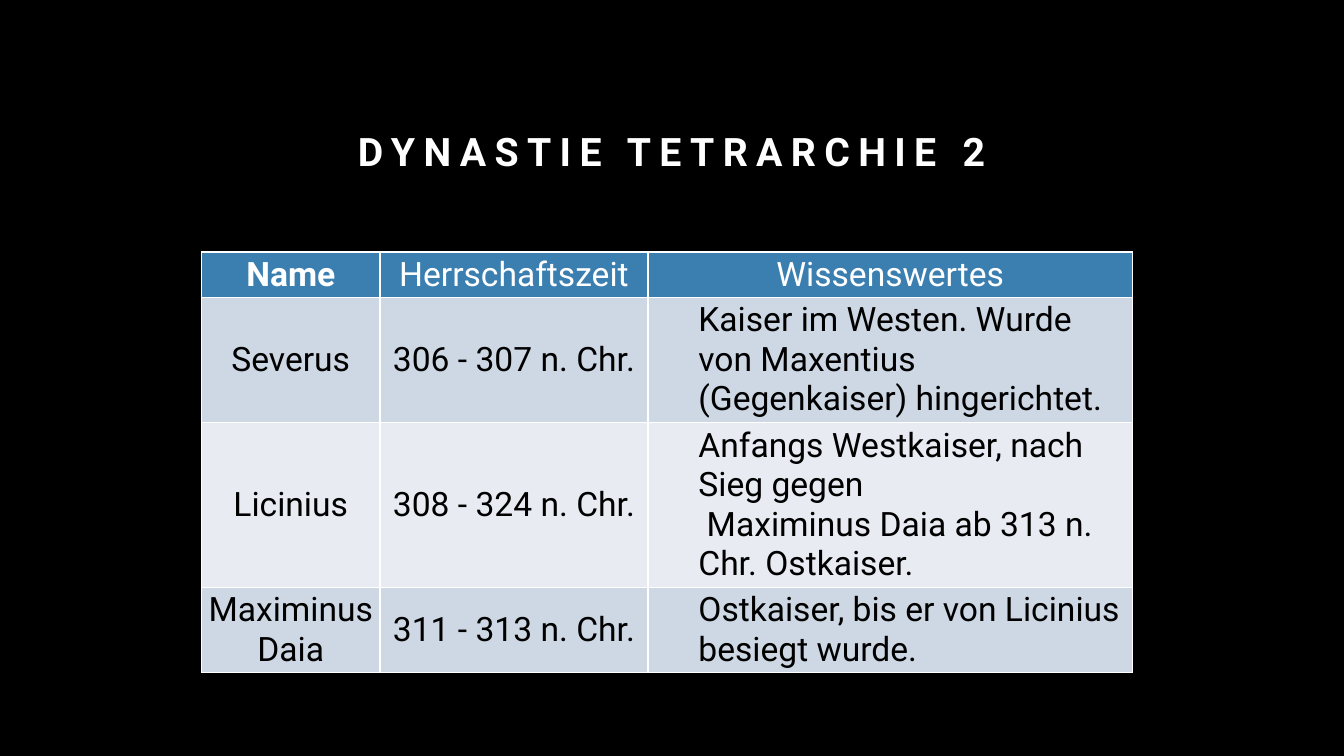
import pptx
import pptx.dml.color
import pptx.enum.text
import pptx.oxml
import pptx.oxml.ns
import pptx.util

Pt = pptx.util.Pt
ALIGN = pptx.enum.text.PP_ALIGN
ANCHOR = pptx.enum.text.MSO_ANCHOR

FONT = "Roboto"
COLORS = {
    "background": "000000",
    "light_text": "FFFFFF",
    "dark_text": "000000",
    "border": "FFFFFF",
    "header": "3B7FB1",
    "odd_row": "CED8E4",
    "even_row": "E8ECF2",
}
COLUMN_WIDTHS = [127.4, 191.5, 346]
ROW_HEIGHTS = [32.4, 89.3, 118, 60.5]
EMPERORS = [
    ["Name", "Herrschaftszeit", "Wissenswertes"],
    ["Severus", "306 - 307 n. Chr.",
     "Kaiser im Westen. Wurde von Maxentius (Gegenkaiser) hingerichtet."],
    ["Licinius", "308 - 324 n. Chr.",
     "Anfangs Westkaiser, nach Sieg gegen\v Maximinus Daia ab 313 n. Chr. Ostkaiser."],
    ["Maximinus Daia", "311 - 313 n. Chr.",
     "Ostkaiser, bis er von Licinius besiegt wurde."],
]


def rgb(name):
    return pptx.dml.color.RGBColor.from_string(COLORS[name])


def style_font(paragraph, size, color, bold=False):
    paragraph.font.name = FONT
    paragraph.font.size = Pt(size)
    paragraph.font.bold = bold
    paragraph.font.color.rgb = rgb(color)


def add_title(slide, text):
    box = slide.shapes.add_textbox(Pt(120), Pt(60), Pt(720), Pt(68.4))
    frame = box.text_frame
    frame.word_wrap = True
    frame.vertical_anchor = ANCHOR.BOTTOM
    paragraph = frame.paragraphs[0]
    run = paragraph.add_run()
    run.text = text
    paragraph.alignment = ALIGN.CENTER
    paragraph.line_spacing = 1.2
    style_font(paragraph, 28, "light_text", bold=True)
    run.font.bold = True
    run.font._element.set("spc", "600")


def add_borders(cell):
    properties = cell._tc.get_or_add_tcPr()
    for position, side in enumerate("LRTB"):
        line = pptx.oxml.parse_xml(
            f'<a:ln{side} {pptx.oxml.ns.nsdecls("a")} w="{Pt(1)}"><a:solidFill>'
            f'<a:srgbClr val="{COLORS["border"]}"/></a:solidFill></a:ln{side}>')
        properties.insert(position, line)


def fill_cell(cell, text, fill, color, bold, indented):
    cell.fill.solid()
    cell.fill.fore_color.rgb = rgb(fill)
    cell.margin_left = cell.margin_right = cell.margin_top = cell.margin_bottom = 0
    cell.vertical_anchor = ANCHOR.MIDDLE
    cell.text_frame.text = text
    paragraph = cell.text_frame.paragraphs[0]
    style_font(paragraph, 24, color, bold)
    if indented:
        paragraph.level = 1
        paragraph.alignment = ALIGN.LEFT
        paragraph_properties = paragraph._p.get_or_add_pPr()
        paragraph_properties.set("marL", str(Pt(36)))
        paragraph_properties.set("indent", "0")
    else:
        paragraph.alignment = ALIGN.CENTER
    add_borders(cell)


def add_emperor_table(slide):
    frame = slide.shapes.add_table(
        len(EMPERORS), len(COLUMN_WIDTHS), Pt(144), Pt(180),
        Pt(sum(COLUMN_WIDTHS)), Pt(sum(ROW_HEIGHTS)))
    table = frame.table
    table.first_row = table.horz_banding = False
    for column, width in zip(table.columns, COLUMN_WIDTHS):
        column.width = Pt(width)
    for row, height in zip(table.rows, ROW_HEIGHTS):
        row.height = Pt(height)
    for row_index, texts in enumerate(EMPERORS):
        is_header = row_index == 0
        band = "odd_row" if row_index % 2 else "even_row"
        for column_index, text in enumerate(texts):
            fill_cell(
                table.cell(row_index, column_index), text,
                fill="header" if is_header else band,
                color="light_text" if is_header else "dark_text",
                bold=is_header and column_index == 0,
                indented=not is_header and column_index == 2)


def main():
    presentation = pptx.Presentation()
    presentation.slide_width = Pt(960)
    presentation.slide_height = Pt(540)
    slide = presentation.slides.add_slide(presentation.slide_layouts[6])
    slide.background.fill.solid()
    slide.background.fill.fore_color.rgb = rgb("background")
    add_title(slide, "DYNASTIE TETRARCHIE 2")
    add_emperor_table(slide)
    presentation.save("out.pptx")


if __name__ == "__main__":
    main()
